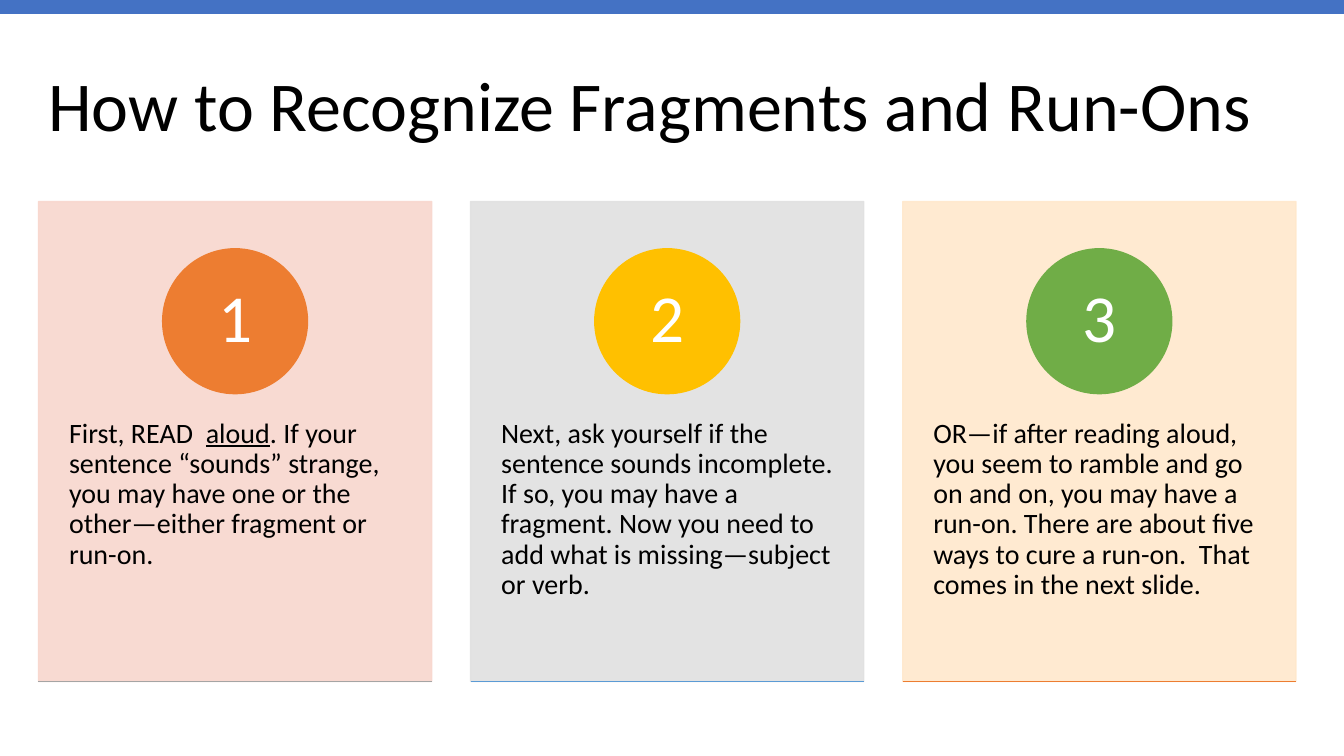
from typing import NamedTuple

from lxml.etree import SubElement
from pptx import Presentation
from pptx.dml.color import RGBColor
from pptx.enum.shapes import MSO_CONNECTOR, MSO_SHAPE
from pptx.enum.text import MSO_ANCHOR, PP_ALIGN
from pptx.oxml.ns import qn
from pptx.util import Cm, Pt

COLORS = {
    "black": "000000", "white": "FFFFFF", "blue": "4472C4",
    "orange": "ED7D31", "gold": "FFC000", "green": "70AD47",
    "gray": "A5A5A5", "sky": "5B9BD5",
    "rose": "F8D7CE", "silver": "E1E1E1", "peach": "FFE8CC",
}
FONT = "Calibri"
LEFT, TOP, WIDTH, HEIGHT, PITCH = 0.97, 5.08, 9.91, 12.09, 10.89
CIRCLE = 3.65


class Run(NamedTuple):
    text: str
    underline: bool = False


class Card(NamedTuple):
    number: str
    panel: str
    circle: str
    rule: str
    runs: list[Run]


CARDS = [
    Card("1", "rose", "orange", "gray", [
        Run("First, READ  "), Run("aloud", True),
        Run(". If your sentence “sounds” strange, you may have one or the "
            "other—either fragment or run-on.")]),
    Card("2", "silver", "gold", "sky", [
        Run("Next, ask yourself if the sentence sounds incomplete. If so, you may "
            "have a fragment. Now you need to add what is missing—subject or verb.")]),
    Card("3", "peach", "green", "orange", [
        Run("OR—if after reading aloud, you seem to ramble and go on and on, you may "
            "have a run-on. There are about five ways to cure a run-on.  That comes "
            "in the next slide.")]),
]


def rgb(name: str) -> RGBColor:
    return RGBColor.from_string(COLORS[name])


def write(tf, runs: list[Run], size: int, color: str, align: PP_ALIGN,
          anchor: MSO_ANCHOR, inset_x: float, inset_y: float) -> None:
    tf.word_wrap = True
    tf.vertical_anchor = anchor
    tf.margin_left = tf.margin_right = Cm(inset_x)
    tf.margin_top = tf.margin_bottom = Cm(inset_y)
    p = tf.paragraphs[0]
    p.alignment = align
    p.line_spacing = 0.9
    for run in runs:
        r = p.add_run()
        r.text = run.text
        r.font.name, r.font.size = FONT, Pt(size)
        r.font.color.rgb = rgb(color)
        if run.underline:
            r.font.underline = True


def add_filled(s, kind: MSO_SHAPE, x: float, y: float, w: float, h: float,
               color: str, alpha: int = 100, outlined: bool = True):
    sp = s.shapes.add_shape(kind, Cm(x), Cm(y), Cm(w), Cm(h))
    sp.shadow.inherit = False
    sp.fill.solid()
    sp.fill.fore_color.rgb = rgb(color)
    if outlined:
        sp.line.color.rgb = rgb(color)
        sp.line.width = Pt(1)
    else:
        sp.line.fill.background()
    if alpha < 100:
        for clr in sp.element.spPr.iter(qn("a:srgbClr")):
            SubElement(clr, qn("a:alpha"), val=str(alpha * 1000))
    return sp


def add_card(s, card: Card, x: float) -> None:
    # Panel
    add_filled(s, MSO_SHAPE.RECTANGLE, x, TOP, WIDTH, HEIGHT, card.panel, alpha=90)
    # Body text
    tb = s.shapes.add_textbox(Cm(x), Cm(9.65), Cm(WIDTH), Cm(7.26))
    write(tb.text_frame, card.runs, 20, "black", PP_ALIGN.LEFT, MSO_ANCHOR.TOP, 0.77, 0.91)
    # Numbered circle
    sp = add_filled(s, MSO_SHAPE.OVAL, x + (WIDTH - CIRCLE) / 2, 6.27,
                    CIRCLE, CIRCLE, card.circle)
    write(sp.text_frame, [Run(card.number)], 48, "white", PP_ALIGN.CENTER,
          MSO_ANCHOR.MIDDLE, 0.28, 0.03)
    # Bottom rule
    base = Cm(TOP + HEIGHT)
    cn = s.shapes.add_connector(MSO_CONNECTOR.STRAIGHT, Cm(x), base, Cm(x + WIDTH), base)
    cn.line.color.rgb = rgb(card.rule)
    cn.line.width = Pt(1)
    SubElement(cn.element.spPr, qn("a:effectLst"))


def main() -> None:
    prs = Presentation()
    prs.slide_width, prs.slide_height = Cm(33.87), Cm(19.05)
    s = prs.slides.add_slide(prs.slide_layouts[6])

    # Title
    tb = s.shapes.add_textbox(Cm(LEFT), Cm(0.89), Cm(31.7), Cm(3.68))
    write(tb.text_frame, [Run("How to Recognize Fragments and Run-Ons")], 50, "black",
          PP_ALIGN.LEFT, MSO_ANCHOR.MIDDLE, 0.25, 0.13)

    # Top bar
    add_filled(s, MSO_SHAPE.RECTANGLE, 0, 0, 33.87, 0.35, "blue", outlined=False)

    # Step cards
    for i, card in enumerate(CARDS):
        add_card(s, card, LEFT + i * PITCH)

    prs.save("out.pptx")


if __name__ == "__main__":
    main()
